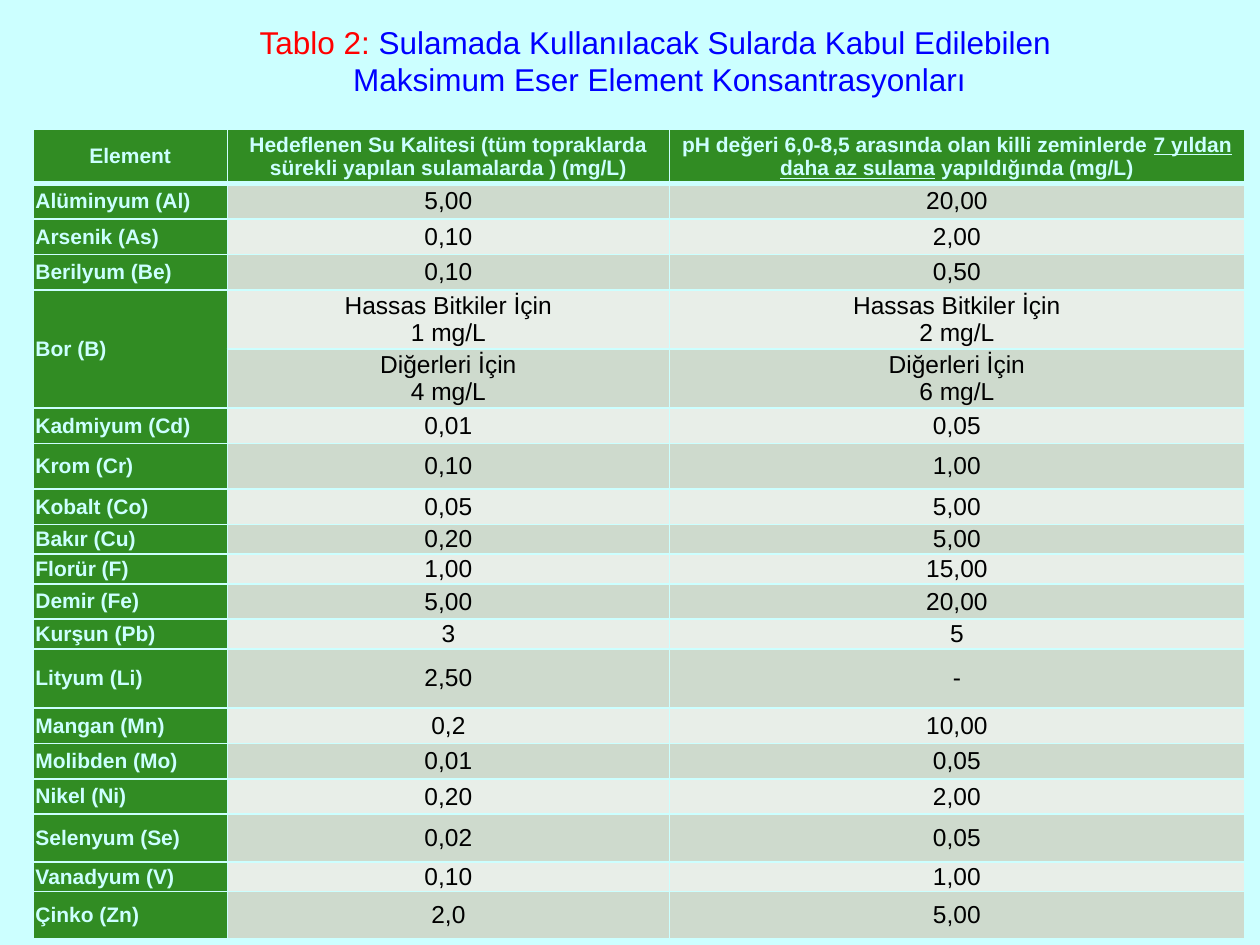
import lxml.etree
import pptx
import pptx.dml.color
import pptx.enum.text
import pptx.oxml.ns
import pptx.util

Pt = pptx.util.Pt
ALIGN = pptx.enum.text.PP_ALIGN
ANCHOR = pptx.enum.text.MSO_ANCHOR
qn = pptx.oxml.ns.qn

PALE, GREEN = "CCFFFF", "318C23"
BANDS = ("CEDACD", "E8EEE8")
COLUMNS = (110.9, 252.7, 328.5)
HEADER_HEIGHT = 31
HEADERS = (
    [("Element", False)],
    [("Hedeflenen Su Kalitesi (tüm topraklarda sürekli yapılan sulamalarda ) (mg/L)", False)],
    [("pH değeri 6,0-8,5 arasında olan killi zeminlerde ", False),
     ("7 yıldan daha az sulama", True), (" yapıldığında (mg/L)", False)],
)
# Element, target quality, short-term limit, row height
ROWS = (
    ("Alüminyum (Al)", "5,00", "20,00", 20.25),
    ("Arsenik (As)", "0,10", "2,00", 20.25),
    ("Berilyum (Be)", "0,10", "0,50", 20.25),
    ("Bor (B)", "Hassas Bitkiler İçin\n1 mg/L", "Hassas Bitkiler İçin\n2 mg/L", 33.75),
    ("", "Diğerleri İçin\n4 mg/L", "Diğerleri İçin\n6 mg/L", 33.75),
    ("Kadmiyum (Cd)", "0,01", "0,05", 20.25),
    ("Krom (Cr)", "0,10", "1,00", 26),
    ("Kobalt (Co)", "0,05", "5,00", 20.25),
    ("Bakır (Cu)", "0,20", "5,00", 17),
    ("Florür (F)", "1,00", "15,00", 17),
    ("Demir (Fe)", "5,00", "20,00", 20.25),
    ("Kurşun (Pb)", "3", "5", 17),
    ("Lityum (Li)", "2,50", "-", 33.75),
    ("Mangan (Mn)", "0,2", "10,00", 20.25),
    ("Molibden (Mo)", "0,01", "0,05", 20.25),
    ("Nikel (Ni)", "0,20", "2,00", 20.25),
    ("Selenyum (Se)", "0,02", "0,05", 27.25),
    ("Vanadyum (V)", "0,10", "1,00", 17),
    ("Çinko (Zn)", "2,0", "5,00", 27),
)


def color(value):
    return pptx.dml.color.RGBColor.from_string(value)


def add_text(p, text, size=14, fill="000000", bold=False, underline=False, align=ALIGN.CENTER):
    p.alignment = align
    r = p.add_run()
    r.text = text
    r.font.name = "Arial"
    r.font.size = Pt(size)
    r.font.bold = bold
    r.font.underline = underline
    r.font.color.rgb = color(fill)


def style_cell(cell, fill, top=1, bottom=1):
    cell.fill.solid()
    cell.fill.fore_color.rgb = color(fill)
    cell.vertical_anchor = ANCHOR.MIDDLE
    cell.margin_left = cell.margin_right = Pt(1.25)
    cell.margin_top = cell.margin_bottom = 0
    # Borders come before the fill in the cell properties
    tcPr = cell._tc.get_or_add_tcPr()
    borders = (("a:lnL", 1), ("a:lnR", 1), ("a:lnT", top), ("a:lnB", bottom))
    for i, (tag, width) in enumerate(borders):
        ln = lxml.etree.Element(qn(tag), w=str(Pt(width)))
        solid = lxml.etree.SubElement(ln, qn("a:solidFill"))
        lxml.etree.SubElement(solid, qn("a:srgbClr"), val=PALE)
        tcPr.insert(i, ln)


def add_title(slide, left, top, width, height):
    tf = slide.shapes.add_textbox(Pt(left), Pt(top), Pt(width), Pt(height)).text_frame
    tf.word_wrap = True
    p = tf.paragraphs[0]
    add_text(p, "Tablo 2: ", size=18, fill="FF0000")
    add_text(p, "Sulamada Kullanılacak Sularda Kabul Edilebilen", size=18, fill="0000FF")
    add_text(tf.add_paragraph(), " Maksimum Eser Element Konsantrasyonları", size=18, fill="0000FF")


def add_limits_table(slide, left, top, width, height):
    table = slide.shapes.add_table(len(ROWS) + 1, len(COLUMNS), Pt(left), Pt(top),
                                   Pt(width), Pt(height)).table
    for column, size in zip(table.columns, COLUMNS):
        column.width = Pt(size)

    # Header row
    table.rows[0].height = Pt(HEADER_HEIGHT)
    for cell, runs in zip(table.rows[0].cells, HEADERS):
        style_cell(cell, GREEN, bottom=3)
        for text, underline in runs:
            add_text(cell.text_frame.paragraphs[0], text, size=12, fill=PALE,
                     bold=True, underline=underline)

    # Element rows with alternating bands
    for i, (element, *limits, row_height) in enumerate(ROWS, 1):
        table.rows[i].height = Pt(row_height)
        top_line = 3 if i == 1 else 1
        name = table.cell(i, 0)
        style_cell(name, GREEN, top=top_line)
        if element:
            add_text(name.text_frame.paragraphs[0], element, size=12, fill=PALE,
                     bold=True, align=ALIGN.LEFT)
        else:
            table.cell(i - 1, 0).merge(name)
        for j, limit in enumerate(limits, 1):
            cell = table.cell(i, j)
            style_cell(cell, BANDS[(i - 1) % 2], top=top_line)
            tf = cell.text_frame
            for n, line in enumerate(limit.split("\n")):
                add_text(tf.add_paragraph() if n else tf.paragraphs[0], line)


def main():
    prs = pptx.Presentation()
    prs.slide_width, prs.slide_height = Pt(720), Pt(540)
    slide = prs.slides.add_slide(prs.slide_layouts[6])
    slide.background.fill.solid()
    slide.background.fill.fore_color.rgb = color(PALE)
    add_title(slide, 38.2, 9.4, 672.5, 51)
    table_height = HEADER_HEIGHT + sum(row[-1] for row in ROWS)
    add_limits_table(slide, 19, 74, sum(COLUMNS), table_height)
    prs.save("out.pptx")


if __name__ == "__main__":
    main()
